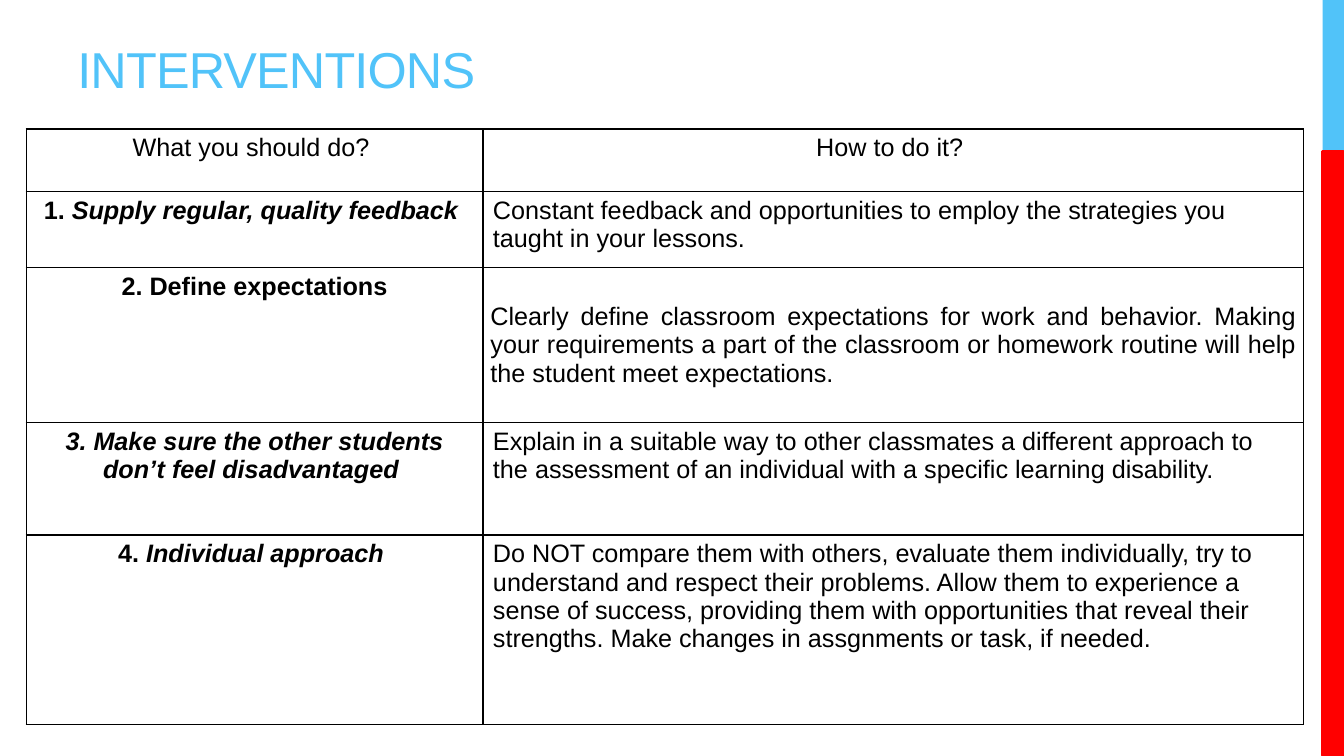
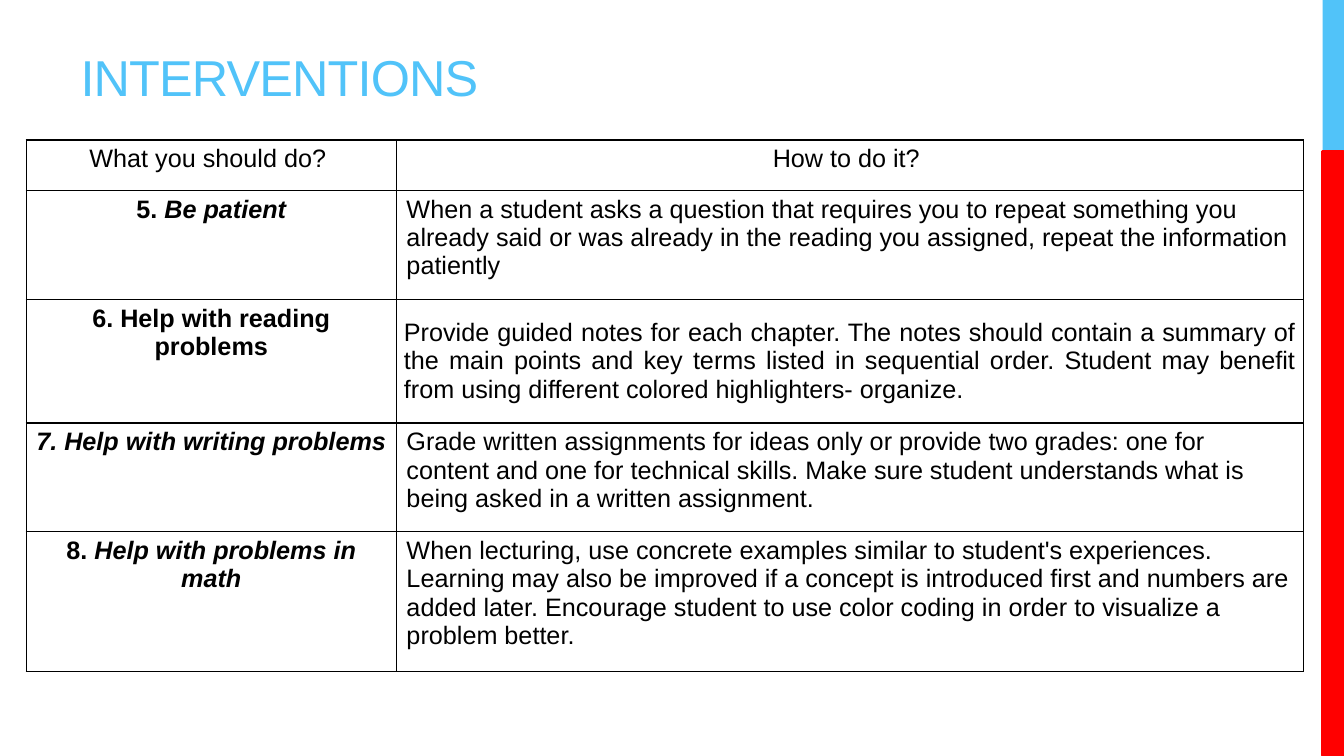
from lxml.etree import SubElement
from pptx import Presentation
from pptx.dml.color import RGBColor
from pptx.enum.shapes import MSO_SHAPE as Preset
from pptx.enum.text import MSO_ANCHOR as Anchor, PP_ALIGN as Align
from pptx.oxml.ns import qn
from pptx.util import Cm, Pt

FONT = "Arial"
BLUE, RED, BLACK, WHITE = "51C3F9", "FF0000", "000000", "FFFFFF"
SLIDE_WIDTH, SLIDE_HEIGHT = 33.87, 19.05
BAND_WIDTH, BLUE_BAND_HEIGHT = 0.54, 3.81
TABLE_LEFT = 0.66
BOLD = {"bold": True}
BOLD_ITALIC = {"bold": True, "italic": True}
HEADINGS = ("What you should do? ", "How to do it? ")

# Each row: the runs of the action, then the advice
FIRST_ROWS = [
    ([("1. ", BOLD), ("Supply regular, quality feedback ", BOLD_ITALIC)],
     "Constant feedback and opportunities to employ the strategies you taught "
     "in your lessons."),
    ([("2. Define expectations", BOLD)],
     "Clearly define classroom expectations for work and behavior. Making your "
     "requirements a part of the classroom or homework routine will help the "
     "student meet expectations. "),
    ([("3. Make sure the other students don’t feel disadvantaged ", BOLD_ITALIC)],
     "Explain in a suitable way to other classmates a different approach to the "
     "assessment of an individual with a specific learning disability."),
    ([("4. ", BOLD), ("Individual approach ", BOLD_ITALIC)],
     "Do NOT compare them with others, evaluate them individually, try to "
     "understand and respect their problems. Allow them to experience a sense of "
     "success, providing them with opportunities that reveal their strengths. "
     "Make changes in assgnments or task, if needed."),
]
SECOND_ROWS = [
    ([("5. ", BOLD), ("Be patient", BOLD_ITALIC)],
     "When a student asks a question that requires you to repeat something you "
     "already said or was already in the reading you assigned, repeat the "
     "information patiently"),
    ([("6. Help with reading problems", BOLD)],
     "Provide guided notes for each chapter. The notes should contain a summary "
     "of the main points and key terms listed in sequential order. Student may "
     "benefit from using different colored highlighters- organize."),
    ([("7. Help with writing problems", BOLD_ITALIC)],
     "Grade written assignments for ideas only or provide two grades: one for "
     "content and one for technical skills. Make sure student understands what "
     "is being asked in a written assignment."),
    ([("8. ", BOLD), ("Help with problems in math", BOLD_ITALIC)],
     "When lecturing, use concrete examples similar to student's experiences. "
     "Learning may also be improved if a concept is introduced first and numbers "
     "are added later. Encourage student to use color coding in order to "
     "visualize a problem better."),
]
JUSTIFIED_ROW = 2


def rgb(color):
    return RGBColor.from_string(color)


def write_text(paragraph, text, size=18, color=BLACK, bold=False, italic=False,
               spacing=None):
    run = paragraph.add_run()
    run.text = text
    font = run.font
    font.name, font.size = FONT, Pt(size)
    font.bold, font.italic = bold, italic
    font.color.rgb = rgb(color)
    if spacing is not None:
        run._r.get_or_add_rPr().set("spc", str(round(spacing * 100)))


def add_band(slide, top, height, color, line_width=None):
    band = slide.shapes.add_shape(Preset.RECTANGLE, Cm(SLIDE_WIDTH - BAND_WIDTH),
                                  Cm(top), Cm(BAND_WIDTH), Cm(height))
    band.shadow.inherit = False
    band.fill.solid()
    band.fill.fore_color.rgb = rgb(color)
    if line_width:
        band.line.color.rgb = rgb(color)
        band.line.width = Pt(line_width)
    else:
        band.line.fill.background()


def add_title(slide, text, left, height):
    box = slide.shapes.add_textbox(Cm(left), Cm(0.53), Cm(21.44), Cm(height))
    frame = box.text_frame
    frame.word_wrap = True
    frame.vertical_anchor = Anchor.BOTTOM
    paragraph = frame.paragraphs[0]
    paragraph.line_spacing = 0.9
    write_text(paragraph, text, size=36, color=BLUE, spacing=-0.6)


def add_borders(cell, color=BLACK, width=1):
    properties = cell._tc.get_or_add_tcPr()
    for side in ("a:lnL", "a:lnR", "a:lnT", "a:lnB"):
        line = SubElement(properties, qn(side), w=str(Pt(width)))
        fill = SubElement(line, qn("a:solidFill"))
        SubElement(fill, qn("a:srgbClr"), val=color)


def fill_cell(cell, runs, alignment):
    add_borders(cell)
    cell.fill.solid()
    cell.fill.fore_color.rgb = rgb(WHITE)
    paragraph = cell.text_frame.paragraphs[0]
    paragraph.alignment = alignment
    for text, text_format in runs:
        write_text(paragraph, text, **text_format)


def add_interventions(slide, rows, top, widths, heights):
    frame = slide.shapes.add_table(len(heights), len(widths), Cm(TABLE_LEFT), Cm(top),
                                   Cm(sum(widths)), Cm(sum(heights)))
    table = frame.table
    table.first_row = table.horz_banding = False
    for column, width in zip(table.columns, widths):
        column.width = Cm(width)
    for row, height in zip(table.rows, heights):
        row.height = Cm(height)

    # Header row
    for index, heading in enumerate(HEADINGS):
        fill_cell(table.cell(0, index), [(heading, {})], Align.CENTER)

    # Numbered actions with their advice
    for index, (action, advice) in enumerate(rows, start=1):
        justified = index == JUSTIFIED_ROW
        fill_cell(table.cell(index, 0), action, Align.CENTER)
        advice_cell = table.cell(index, 1)
        fill_cell(advice_cell, [(advice, {})],
                  Align.JUSTIFY if justified else Align.LEFT)
        if justified:
            advice_cell.vertical_anchor = Anchor.MIDDLE
            advice_cell.margin_left = advice_cell.margin_right = Cm(0.19)
            advice_cell.margin_top = advice_cell.margin_bottom = Cm(0)


def add_slide(presentation):
    slide = presentation.slides.add_slide(presentation.slide_layouts[6])
    add_band(slide, 0, BLUE_BAND_HEIGHT, BLUE)
    add_band(slide, BLUE_BAND_HEIGHT, SLIDE_HEIGHT - BLUE_BAND_HEIGHT, RED,
             line_width=2.25)
    return slide


def main():
    presentation = Presentation()
    presentation.slide_width = Cm(SLIDE_WIDTH)
    presentation.slide_height = Cm(SLIDE_HEIGHT)

    # Interventions 1 to 4
    slide = add_slide(presentation)
    add_title(slide, "INTERVENTIONS", left=1.7, height=2.11)
    add_interventions(slide, FIRST_ROWS, top=3.25, widths=(11.51, 20.68),
                      heights=(1.57, 1.93, 3.89, 2.84, 4.78))

    # Interventions 5 to 8
    slide = add_slide(presentation)
    add_title(slide, "INTERVENTIONS", left=1.78, height=2.31)
    add_interventions(slide, SECOND_ROWS, top=3.53, widths=(9.33, 22.85),
                      heights=(1.27, 2.74, 3.12, 2.74, 3.53))

    presentation.save("out.pptx")


if __name__ == "__main__":
    main()
